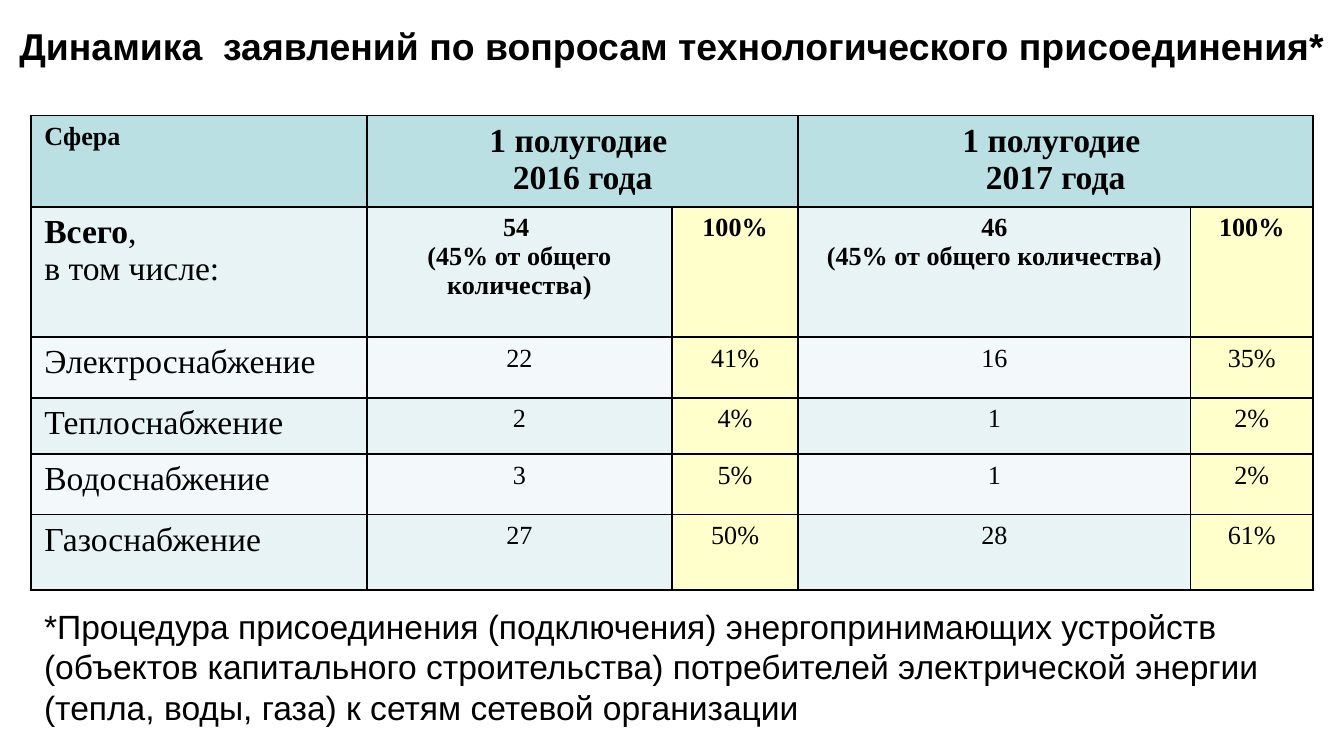
from lxml.etree import SubElement
from pptx import Presentation
from pptx.dml.color import RGBColor
from pptx.enum.shapes import MSO_SHAPE as Shape
from pptx.enum.text import MSO_ANCHOR as Anchor, PP_ALIGN as Align
from pptx.oxml.ns import qn
from pptx.util import Inches, Pt

# Widescreen, 16 to 9
WIDTH = Inches(10)
HEIGHT = WIDTH * 9 // 16
BLACK = RGBColor(0, 0, 0)
WHITE = RGBColor(255, 255, 255)
HEADER = RGBColor(0xBB, 0xE0, 0xE3)
BAND_DARK = RGBColor(0xE7, 0xF3, 0xF4)
BAND_LIGHT = RGBColor(0xF3, 0xF9, 0xFA)
SHARE_FILL = RGBColor(0xFF, 0xFF, 0xCC)
SANS, SERIF = "Arial", "Times New Roman"

COLUMNS = [2.5, 2.27, 0.94, 2.92, 0.91]
ROWS = [0.68, 0.97, 0.45, 0.42, 0.45, 0.56]
SHARE_COLUMNS = (2, 4)
NOTE_45 = "(45% от общего количества)"

# Each cell is a list of lines; the header cells for the half-years span two columns
HEADINGS = {0: ["Сфера"], 1: ["1 полугодие ", "2016 года"], 3: ["1 полугодие ", "2017 года"]}
TOTALS = [["54 ", NOTE_45], ["100%"], ["46", NOTE_45], ["100%"]]
SPHERES = [
    ("Электроснабжение", "22", "41%", "16", "35%"),
    ("Теплоснабжение", "2", "4%", "1", "2%"),
    ("Водоснабжение", "3", "5%", "1", "2%"),
    ("Газоснабжение", "27", "50%", "28", "61%"),
]


def write(frame, lines, font, size, bold=False, align=Align.LEFT):
    """Fill a text frame; a line is a string or a list of (text, bold) runs."""
    for index, line in enumerate(lines):
        paragraph = frame.paragraphs[0] if index == 0 else frame.add_paragraph()
        paragraph.alignment = align
        for text, run_bold in [(line, bold)] if isinstance(line, str) else line:
            run = paragraph.add_run()
            run.text = text
            run.font.name = font
            run.font.size = Pt(size)
            run.font.bold = run_bold
            run.font.color.rgb = BLACK


def add_borders(cell):
    properties = cell._tc.get_or_add_tcPr()
    for side in ("a:lnL", "a:lnR", "a:lnT", "a:lnB"):
        line = SubElement(properties, qn(side), w=str(Pt(1)))
        fill = SubElement(line, qn("a:solidFill"))
        SubElement(fill, qn("a:srgbClr"), val=str(BLACK))


def cell_fill(row, column):
    if row == 0:
        return HEADER
    if column in SHARE_COLUMNS:
        return SHARE_FILL
    return BAND_DARK if row % 2 else BAND_LIGHT


def add_title(slide, left, top, width, height):
    title = slide.shapes.title
    title.left, title.top, title.width, title.height = left, top, width, height
    frame = title.text_frame
    frame.word_wrap = True
    frame.vertical_anchor = Anchor.MIDDLE
    frame.margin_left = frame.margin_right = 0
    write(frame, ["Динамика  заявлений по вопросам технологического присоединения*"],
          SANS, 20, True, Align.CENTER)


def add_statistics(slide, left, top, width, height):
    table = slide.shapes.add_table(len(ROWS), len(COLUMNS), left, top, width, height).table
    for column, share in zip(table.columns, COLUMNS):
        column.width = int(width * share / sum(COLUMNS))
    for row, share in zip(table.rows, ROWS):
        row.height = int(height * share / sum(ROWS))
    for row in range(len(ROWS)):
        for column in range(len(COLUMNS)):
            cell = table.cell(row, column)
            add_borders(cell)
            cell.fill.solid()
            cell.fill.fore_color.rgb = cell_fill(row, column)

    # Header row
    for column, lines in HEADINGS.items():
        cell = table.cell(0, column)
        if column:
            cell.merge(table.cell(0, column + 1))
        write(cell.text_frame, lines, SERIF, 18 if column else 14, True,
              Align.CENTER if column else Align.LEFT)

    # Totals row
    write(table.cell(1, 0).text_frame,
          [[("Всего", True), (",", False)], "в том числе:"], SERIF, 18)
    for column, lines in enumerate(TOTALS, 1):
        write(table.cell(1, column).text_frame, lines, SERIF, 14, True, Align.CENTER)

    # One row for each sphere
    for row, (name, *values) in enumerate(SPHERES, 2):
        write(table.cell(row, 0).text_frame, [name], SERIF, 18)
        for column, value in enumerate(values, 1):
            write(table.cell(row, column).text_frame, [value], SERIF, 14, align=Align.CENTER)


def add_footnote(slide, left, top, width, height):
    box = slide.shapes.add_shape(Shape.RECTANGLE, left, top, width, height)
    box.shadow.inherit = False
    box.fill.solid()
    box.fill.fore_color.rgb = WHITE
    box.line.color.rgb = WHITE
    box.line.width = Pt(2)
    box.text_frame.word_wrap = True
    box.text_frame.vertical_anchor = Anchor.MIDDLE
    write(box.text_frame, [
        "*Процедура присоединения (подключения) энергопринимающих устройств "
        "(объектов капитального строительства) потребителей электрической энергии "
        "(тепла, воды, газа) к сетям сетевой организации"], SANS, 18)


def main():
    presentation = Presentation()
    presentation.slide_width, presentation.slide_height = WIDTH, HEIGHT
    slide = presentation.slides.add_slide(presentation.slide_layouts[5])
    margin = Inches(0.23)
    content_width = WIDTH - 2 * margin
    add_title(slide, 0, Inches(0.14), WIDTH, Inches(0.39))
    add_statistics(slide, margin, Inches(0.86), content_width, Inches(sum(ROWS)))
    add_footnote(slide, margin, Inches(4.53), content_width, Inches(0.86))
    presentation.save("out.pptx")


if __name__ == "__main__":
    main()
